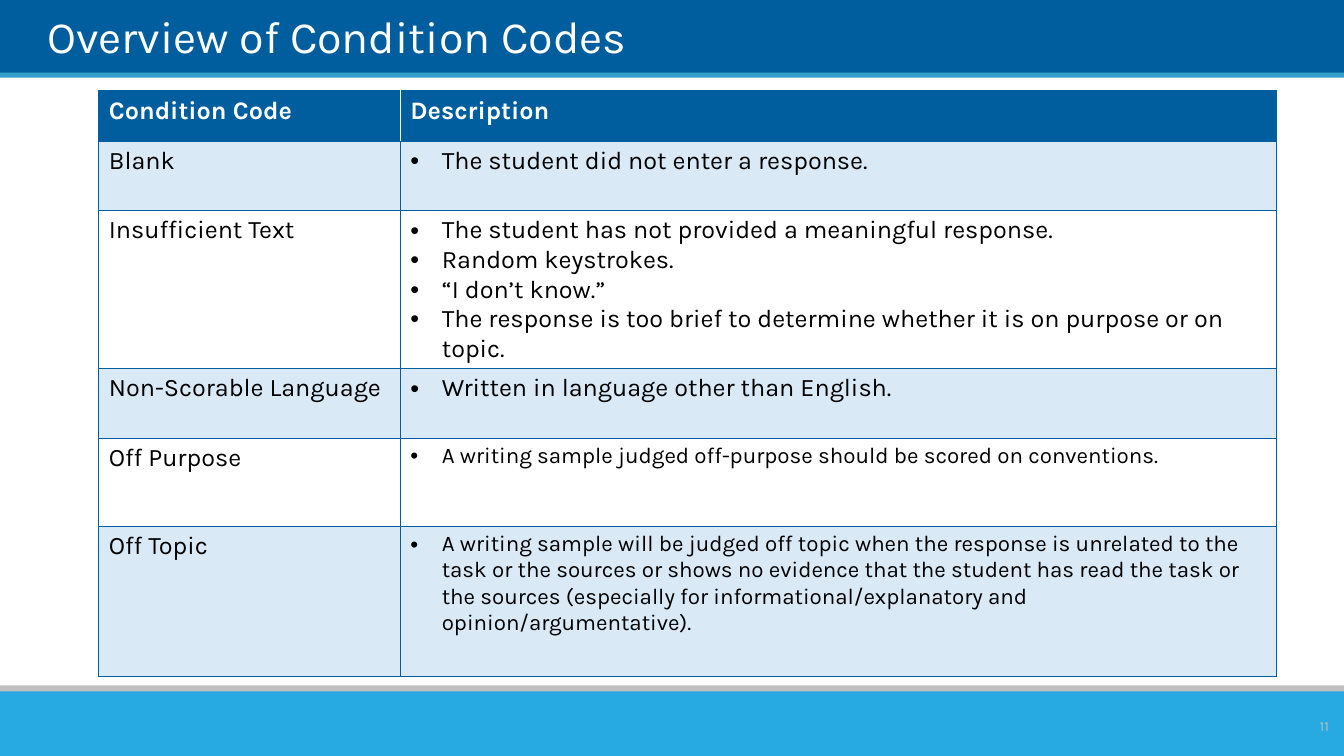
from dataclasses import dataclass
from typing import Any

from lxml.etree import SubElement
from pptx import Presentation
from pptx.dml.color import RGBColor
from pptx.enum.shapes import MSO_SHAPE
from pptx.enum.text import MSO_ANCHOR, MSO_AUTO_SIZE, PP_ALIGN
from pptx.oxml import parse_xml
from pptx.oxml.ns import nsdecls, qn
from pptx.util import Cm, Pt


@dataclass(frozen=True)
class Theme:
    font: str = "Karla"
    navy: str = "005E9E"
    sky: str = "35A0CE"
    cyan: str = "27AAE1"
    gray: str = "BFBFBF"
    pale: str = "DAE9F6"
    white: str = "FFFFFF"
    black: str = "000000"
    title: int = 32
    body: int = 18
    small: int = 16
    page: int = 10


@dataclass(frozen=True)
class Bar:
    top: float
    height: float
    color: str


@dataclass(frozen=True)
class Code:
    name: str
    notes: tuple[str, ...]
    height: float
    size: int


THEME = Theme()
WIDTH, HEIGHT = 33.87, 19.05
INDENT = Cm(0.79)
BARS = (
    Bar(-0.03, 1.91, THEME.navy),
    Bar(1.83, 0.13, THEME.sky),
    Bar(17.27, 0.36, THEME.gray),
    Bar(17.42, 1.63, THEME.cyan),
)
HEADS = ("Condition Code", "Description")
HEAD_ROW = 1.27
COLS = (7.6, 22.07)
CODES = (
    Code("Blank", ("The student did not enter a response.",), 1.75, THEME.body),
    Code("Insufficient Text", (
        "The student has not provided a meaningful response.",
        "Random keystrokes.",
        "“I don’t know.”",
        "The response is too brief to determine whether it is on purpose or on topic.",
    ), 3.53, THEME.body),
    Code("Non-Scorable Language", ("Written in language other than English.",),
         1.75, THEME.body),
    Code("Off Purpose", (
        "A writing sample judged off-purpose should be scored on conventions.",
    ), 2.22, THEME.small),
    Code("Off Topic", (
        "A writing sample will be judged off topic when the response is unrelated "
        "to the task or the sources or shows no evidence that the student has read "
        "the task or the sources (especially for informational/explanatory and "
        "opinion/argumentative).",
    ), 3.78, THEME.small),
)


def apply(target: Any, values: dict[str, Any]) -> None:
    for key, value in values.items():
        setattr(target, key, value)


def write(para: Any, text: str, size: int, color: str, bold: bool = False) -> Any:
    run = para.add_run()
    run.text = text
    apply(run.font, {"name": THEME.font, "size": Pt(size), "bold": bold})
    run.font.color.rgb = RGBColor.from_string(color)
    return run


def draw_bar(shapes: Any, bar: Bar) -> None:
    shape = shapes.add_shape(MSO_SHAPE.RECTANGLE, 0, Cm(bar.top), Cm(WIDTH), Cm(bar.height))
    shape.shadow.inherit = False
    shape.fill.solid()
    shape.fill.fore_color.rgb = RGBColor.from_string(bar.color)
    shape.line.fill.background()


def draw_title(shapes: Any, text: str) -> None:
    """Fill the title placeholder and bring it in front of the bars."""
    title = shapes.title
    apply(title, {"left": Cm(1.19), "top": Cm(0.18),
                  "width": Cm(30.61), "height": Cm(1.45)})
    frame = title.text_frame
    apply(frame, {"margin_left": 0, "margin_top": 0, "margin_right": 0,
                  "margin_bottom": 0, "auto_size": MSO_AUTO_SIZE.NONE,
                  "vertical_anchor": MSO_ANCHOR.MIDDLE})
    para = frame.paragraphs[0]
    para.alignment = PP_ALIGN.LEFT
    write(para, text, THEME.title, THEME.white)
    shapes._spTree.append(title._element)


def paint(cell: Any, fill: str, edges: dict[str, str]) -> None:
    """Fill a cell and rule its sides; edges overrides the navy rule by side."""
    cell.fill.solid()
    cell.fill.fore_color.rgb = RGBColor.from_string(fill)
    props = cell._tc.get_or_add_tcPr()
    for place, side in enumerate("LRTB"):
        color = edges.get(side, THEME.navy)
        props.insert(place, parse_xml(
            f'<a:ln{side} {nsdecls("a")} w="{Pt(0.75)}"><a:solidFill>'
            f'<a:srgbClr val="{color}"/></a:solidFill></a:ln{side}>'))


def add_notes(frame: Any, code: Code) -> None:
    for place, note in enumerate(code.notes):
        para = frame.add_paragraph() if place else frame.paragraphs[0]
        props = para._p.get_or_add_pPr()
        props.set("marL", str(INDENT))
        props.set("indent", str(-INDENT))
        SubElement(props, qn("a:buFont")).set("typeface", "Arial")
        SubElement(props, qn("a:buChar")).set("char", "•")
        write(para, note, code.size, THEME.black)


def draw_table(shapes: Any) -> None:
    heights = (HEAD_ROW, *(code.height for code in CODES))
    table = shapes.add_table(len(heights), len(COLS), Cm(2.49), Cm(2.29),
                             Cm(sum(COLS)), Cm(sum(heights))).table
    for col, width in zip(table.columns, COLS):
        col.width = Cm(width)
    for row, height in zip(table.rows, heights):
        row.height = Cm(height)
    for col, (head, side) in enumerate(zip(HEADS, "RL")):
        cell = table.cell(0, col)
        write(cell.text_frame.paragraphs[0], head, THEME.body, THEME.white, True)
        paint(cell, THEME.navy, {side: THEME.white})
    for row, code in enumerate(CODES, 1):
        name, notes = table.cell(row, 0), table.cell(row, 1)
        write(name.text_frame.paragraphs[0], code.name, THEME.body, THEME.black)
        add_notes(notes.text_frame, code)
        for cell in (name, notes):
            paint(cell, THEME.pale if row % 2 else THEME.white, {})


def draw_page(shapes: Any, number: int) -> None:
    """Add the slide number as a live field."""
    frame = shapes.add_textbox(Cm(31.78), Cm(17.91), Cm(1.96), Cm(0.76)).text_frame
    apply(frame, {"word_wrap": True, "vertical_anchor": MSO_ANCHOR.MIDDLE})
    para = frame.paragraphs[0]
    para.alignment = PP_ALIGN.RIGHT
    run = write(para, str(number), THEME.page, THEME.gray)._r
    field = parse_xml(f'<a:fld {nsdecls("a")} type="slidenum" '
                      'id="{B6F15528-21DE-4FAA-801E-634DDDAF4B2B}"/>')
    field.extend(list(run))
    para._p.replace(run, field)


def main() -> None:
    deck = Presentation()
    apply(deck, {"slide_width": Cm(WIDTH), "slide_height": Cm(HEIGHT)})
    first = 11
    deck.element.set("firstSlideNum", str(first))
    shapes = deck.slides.add_slide(deck.slide_layouts[5]).shapes
    for bar in BARS:
        draw_bar(shapes, bar)
    draw_title(shapes, "Overview of Condition Codes")
    draw_table(shapes)
    draw_page(shapes, first)
    deck.save("out.pptx")


if __name__ == "__main__":
    main()
